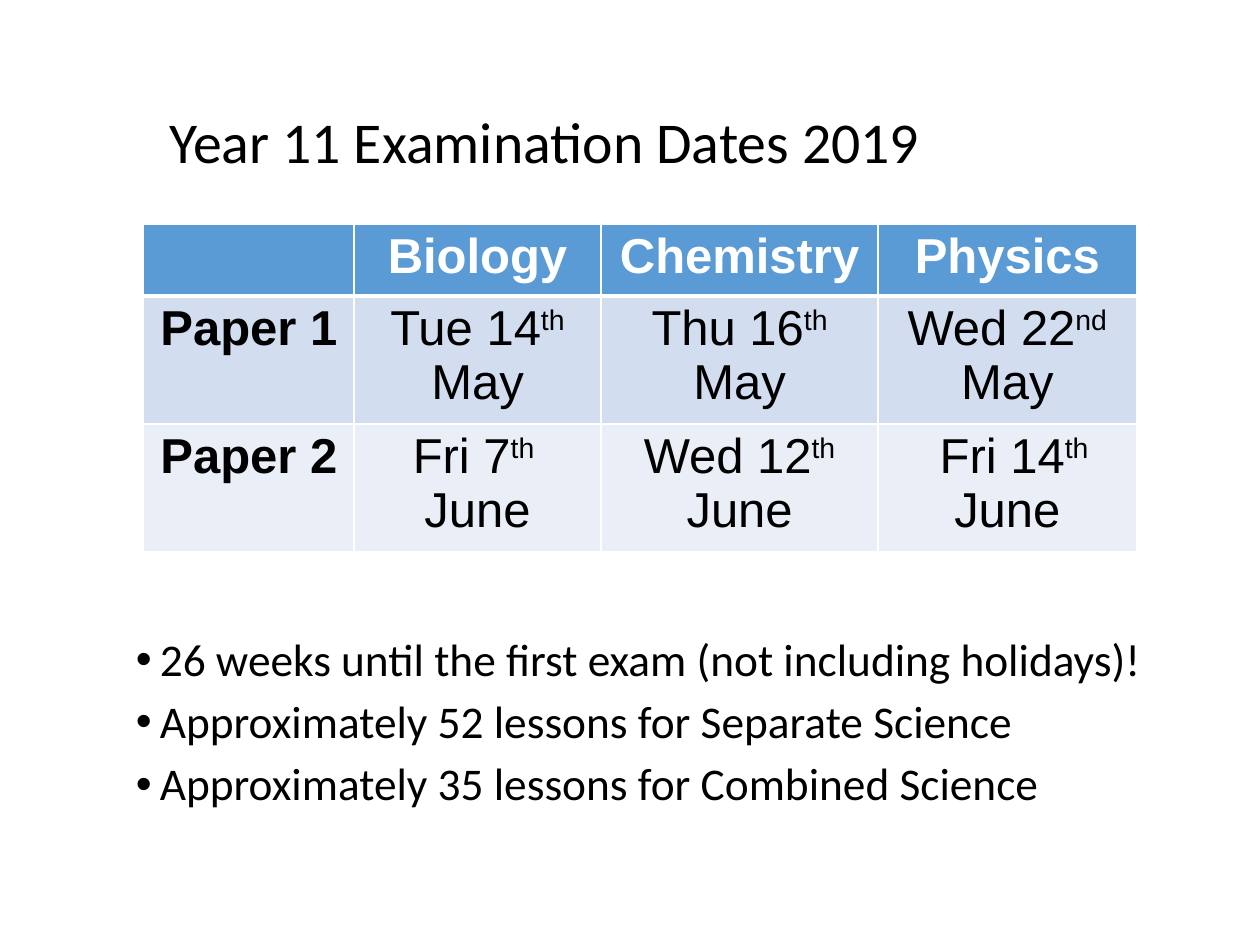
from dataclasses import dataclass

import pptx
import pptx.dml.color
import pptx.enum.text
import pptx.oxml.ns
import pptx.util
from lxml import etree
from pptx.dml.color import RGBColor
from pptx.util import Inches, Pt

BLACK = RGBColor(0x00, 0x00, 0x00)
WHITE = RGBColor(0xFF, 0xFF, 0xFF)
HEADER_BLUE = RGBColor(0x5B, 0x9B, 0xD5)
BAND_DARK = RGBColor(0xD2, 0xDE, 0xEF)
BAND_LIGHT = RGBColor(0xEA, 0xEF, 0xF7)

COLUMN_WIDTHS = (1.67, 1.96, 2.2, 2.05)


@dataclass(frozen=True)
class ExamDate:
    day: str
    suffix: str
    month: str
    own_line: bool = False


@dataclass(frozen=True)
class TableRow:
    height: float
    fill: RGBColor
    cells: tuple[str | ExamDate, ...]


ROWS = (
    TableRow(0.57, HEADER_BLUE, ("", "Biology", "Chemistry", "Physics")),
    TableRow(0.97, BAND_DARK, (
        "Paper 1",
        ExamDate("Tue 14", "th", " May"),
        ExamDate("Thu 16", "th", " May"),
        ExamDate("Wed 22", "nd", " May"),
    )),
    TableRow(0.97, BAND_LIGHT, (
        "Paper 2",
        ExamDate("Fri 7", "th ", "June", own_line=True),
        ExamDate("Wed 12", "th", " June"),
        ExamDate(" Fri 14", "th", " June"),
    )),
)

LESSON_NOTES = (
    "26 weeks until the first exam (not including holidays)!",
    "Approximately 52 lessons for Separate Science",
    "Approximately 35 lessons for Combined Science",
)


def add_child(parent, tag: str, **attributes: str):
    return etree.SubElement(parent, pptx.oxml.ns.qn(tag), attributes)


def set_borders(cell, bottom_width: float) -> None:
    properties = cell._tc.get_or_add_tcPr()
    sides = {"a:lnL": 1, "a:lnR": 1, "a:lnT": 1, "a:lnB": bottom_width}
    for tag, width in sides.items():
        line = add_child(properties, tag, w=str(Pt(width)))
        add_child(add_child(line, "a:solidFill"), "a:srgbClr", val=str(WHITE))


def style_paragraph(para, font: str, size: float, color: RGBColor, bold: bool = False) -> None:
    para.font.name = font
    para.font.size = Pt(size)
    para.font.color.rgb = color
    para.font.bold = bold


def write_date(frame, date: ExamDate) -> None:
    """Write the date with its ordinal suffix raised."""
    para = frame.paragraphs[0]
    para.add_run().text = date.day
    suffix = para.add_run()
    suffix.text = date.suffix
    suffix.font._element.set("baseline", "30000")
    if date.own_line:
        para = frame.add_paragraph()
    para.add_run().text = date.month


def fill_cell(cell, content: str | ExamDate, fill: RGBColor, is_header: bool) -> None:
    cell.margin_left = cell.margin_right = Inches(0.08)
    cell.margin_top = cell.margin_bottom = Inches(0.04)
    set_borders(cell, 3 if is_header else 1)
    cell.fill.solid()
    cell.fill.fore_color.rgb = fill
    is_date = isinstance(content, ExamDate)
    if is_date:
        write_date(cell.text_frame, content)
    else:
        cell.text = content
    for para in cell.text_frame.paragraphs:
        para.alignment = pptx.enum.text.PP_ALIGN.CENTER
        style_paragraph(para, "Arial", 28, WHITE if is_header else BLACK, not is_date)


def add_exam_table(page) -> None:
    frame = page.shapes.add_table(
        len(ROWS), len(COLUMN_WIDTHS), Inches(1.14), Inches(1.78),
        Inches(sum(COLUMN_WIDTHS)), Inches(sum(row.height for row in ROWS)))
    table = frame.table
    for column, width in zip(table.columns, COLUMN_WIDTHS):
        column.width = Inches(width)
    for row_index, row in enumerate(ROWS):
        table.rows[row_index].height = Inches(row.height)
        for column_index, content in enumerate(row.cells):
            fill_cell(table.cell(row_index, column_index), content, row.fill, row_index == 0)


def add_text_frame(page, left: float, top: float, width: float, height: float):
    box = page.shapes.add_textbox(Inches(left), Inches(top), Inches(width), Inches(height))
    box.text_frame.word_wrap = True
    return box.text_frame


def add_title(page) -> None:
    frame = add_text_frame(page, 1.14, 0.54, 9, 1.22)
    frame.vertical_anchor = pptx.enum.text.MSO_ANCHOR.MIDDLE
    para = frame.paragraphs[0]
    para.text = " Year 11 Examination Dates 2019"
    para.line_spacing = 0.9
    style_paragraph(para, "Calibri", 33, BLACK)


def add_lesson_notes(page) -> None:
    frame = add_text_frame(page, 0.98, 5.01, 8.51, 1.73)
    for index, note in enumerate(LESSON_NOTES):
        para = frame.add_paragraph() if index else frame.paragraphs[0]
        para.text = note
        para.line_spacing = 0.9
        if index:
            para.space_before = Pt(7.5)
        properties = para._p.get_or_add_pPr()
        properties.set("marL", str(Inches(0.19)))
        properties.set("indent", str(Inches(-0.19)))
        add_child(properties, "a:buFont", typeface="Arial")
        add_child(properties, "a:buChar", char="•")
        style_paragraph(para, "Calibri", 25.9, BLACK)


def main() -> None:
    deck = pptx.Presentation()
    deck.slide_width = Inches(10)
    deck.slide_height = Inches(7.5)
    page = deck.slides.add_slide(deck.slide_layouts[6])
    add_title(page)
    add_exam_table(page)
    add_lesson_notes(page)
    deck.save("out.pptx")


if __name__ == "__main__":
    main()
